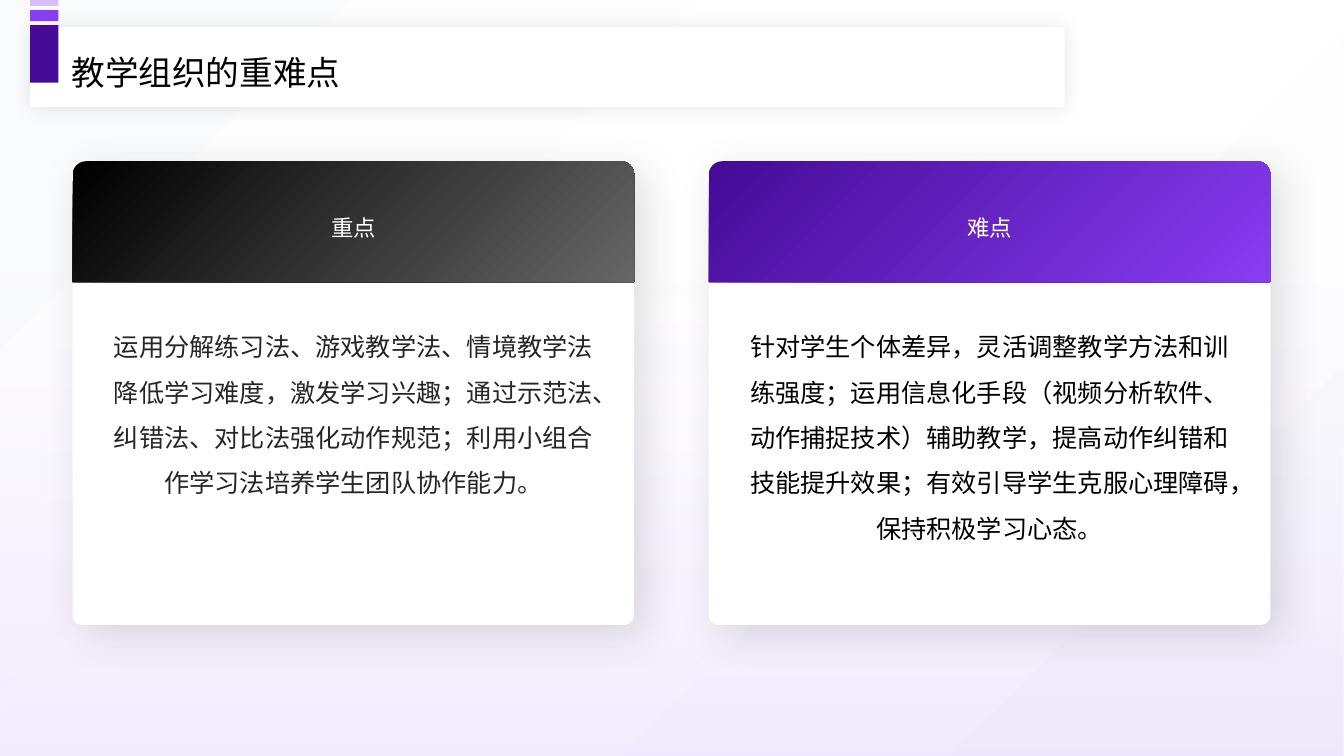
from dataclasses import dataclass

import lxml.etree
import pptx
import pptx.dml.color
import pptx.enum.shapes
import pptx.enum.text
import pptx.oxml.ns
import pptx.util

PX = 9144  # EMU per px, 100 px to the inch
SHAPES = pptx.enum.shapes.MSO_SHAPE
ALIGN = pptx.enum.text.PP_ALIGN
ANCHOR = pptx.enum.text.MSO_ANCHOR


@dataclass(frozen=True)
class Theme:
    font: str = "Noto Sans CJK SC"
    title_size: int = 24
    body_size: int = 18
    heading_size: int = 16
    white: str = "FFFFFF"
    black: str = "000000"
    charcoal: str = "262626"
    grey: str = "666666"
    mist: str = "FAFBFC"
    deep_purple: str = "450B98"
    purple: str = "873DF1"
    soft_purple: str = "AF7EF6"
    pale_purple: str = "D7BEFA"


THEME = Theme()

CARDS = [
    ("重点",
     "运用分解练习法、游戏教学法、情境教学法降低学习难度，激发学习兴趣；通过示范法、纠错法、"
     "对比法强化动作规范；利用小组合作学习法培养学生团队协作能力。",
     (THEME.black, THEME.grey), THEME.charcoal),
    ("难点",
     "针对学生个体差异，灵活调整教学方法和训练强度；运用信息化手段（视频分析软件、动作捕捉技术）"
     "辅助教学，提高动作纠错和技能提升效果；有效引导学生克服心理障碍，保持积极学习心态。",
     (THEME.deep_purple, THEME.purple), THEME.black),
]


def add_child(parent, tag, **attributes):
    child = lxml.etree.SubElement(parent, pptx.oxml.ns.qn(tag))
    for name, value in attributes.items():
        child.set(name, str(value))
    return child


def add_color(parent, color, opacity):
    """Append a colour with its opacity in percent."""
    node = add_child(parent, "a:srgbClr", val=color)
    if opacity < 100:
        add_child(node, "a:alpha", val=opacity * 1000)


def paint_gradient(owner, fill, stops, angle):
    """Fill with (percent, colour, opacity) stops at a clockwise angle."""
    fill.gradient()
    fill.gradient_angle = 360 - angle
    stop_list = owner.element.find(".//" + pptx.oxml.ns.qn("a:gsLst"))
    for stop in list(stop_list):
        stop_list.remove(stop)
    for position, color, opacity in stops:
        add_color(add_child(stop_list, "a:gs", pos=position * 1000), color, opacity)


def add_block(slide, kind, box, color=None):
    shape = slide.shapes.add_shape(kind, *(value * PX for value in box))
    shape.shadow.inherit = False
    shape.line.fill.background()
    if color:
        shape.fill.solid()
        shape.fill.fore_color.rgb = pptx.dml.color.RGBColor.from_string(color)
    return shape


def add_shadow(shape, color, opacity, blur, distance, angle):
    effects = shape.element.spPr.find(pptx.oxml.ns.qn("a:effectLst"))
    shadow = add_child(effects, "a:outerShdw", blurRad=pptx.util.Pt(blur),
                       dist=pptx.util.Pt(distance), dir=angle * 60000,
                       algn="ctr", rotWithShape=0)
    add_color(shadow, color, opacity)


def fill_placeholder(slide, index, box, text, size, color, line_spacing,
                     align=ALIGN.CENTER, anchor=ANCHOR.TOP, insets=(10, 5)):
    """Place and format a template placeholder, in front of earlier shapes."""
    shape = slide.placeholders[index]
    slide.shapes.element.append(shape.element)
    shape.left, shape.top, shape.width, shape.height = (value * PX for value in box)
    frame = shape.text_frame
    frame.text = text
    frame.word_wrap = True
    frame.auto_size = pptx.enum.text.MSO_AUTO_SIZE.NONE
    frame.vertical_anchor = anchor
    frame.margin_left = frame.margin_right = insets[0] * PX
    frame.margin_top = frame.margin_bottom = insets[1] * PX

    paragraph = frame.paragraphs[0]
    paragraph.alignment = align
    paragraph.line_spacing = line_spacing
    paragraph.space_before = pptx.util.Pt(0)
    properties = paragraph._p.get_or_add_pPr()
    properties.set("marL", "0")
    properties.set("indent", "0")
    add_child(properties, "a:buNone")
    font = paragraph.font
    font.size = pptx.util.Pt(size)
    font.bold = False
    font.name = THEME.font
    font.color.rgb = pptx.dml.color.RGBColor.from_string(color)
    add_child(properties.find(pptx.oxml.ns.qn("a:defRPr")), "a:ea", typeface=THEME.font)


def add_backdrop(slide):
    paint_gradient(slide, slide.background.fill,
                   [(0, THEME.mist, 100), (50, THEME.white, 100), (97, THEME.mist, 100)], 45)
    wash = add_block(slide, SHAPES.RECTANGLE, (0, 0, 1333, 750))
    paint_gradient(wash, wash.fill,
                   [(35, THEME.pale_purple, 0), (100, THEME.soft_purple, 15)], 90)


def add_card(slide, number, heading, body, gradient, body_color):
    left = 72 + number * 631
    panel = add_block(slide, SHAPES.ROUNDED_RECTANGLE, (left, 161, 557, 459), THEME.white)
    panel.adjustments[0] = 0.02
    add_shadow(panel, THEME.charcoal, 15, 30, 10, 45)

    header = add_block(slide, SHAPES.ROUND_2_SAME_RECTANGLE, (left, 160, 557, 120))
    header.adjustments[0] = 0.11
    start, end = gradient
    paint_gradient(header, header.fill, [(1, start, 100), (100, end, 100)], 45)

    heading_index = 1 + 2 * number
    fill_placeholder(slide, heading_index, (left + 40, 166, 477, 112), heading,
                     THEME.heading_size, THEME.white, 1.3,
                     anchor=ANCHOR.MIDDLE, insets=(7, 4))
    fill_placeholder(slide, heading_index + 1, (left + 40, 314, 477, 269), body,
                     THEME.body_size, body_color, 1.5, insets=(0, 0))


def add_title(slide, text):
    bar = add_block(slide, SHAPES.RECTANGLE, (30, 27, 1026, 79), THEME.white)
    add_shadow(bar, THEME.black, 10, 13, 0, 0)
    fill_placeholder(slide, 0, (61, 42, 882, 50), text, THEME.title_size,
                     THEME.black, 1.1, align=ALIGN.LEFT)
    for top, height, color in [(25, 57, THEME.deep_purple), (10, 11, THEME.purple),
                               (0, 6, THEME.pale_purple)]:
        add_block(slide, SHAPES.RECTANGLE, (30, top, 28, height), color)


def main():
    presentation = pptx.Presentation()
    presentation.slide_width = 1333 * PX
    presentation.slide_height = 750 * PX
    comparison_layout = presentation.slide_layouts[4]
    slide = presentation.slides.add_slide(comparison_layout)
    add_backdrop(slide)
    for number, card in enumerate(CARDS):
        add_card(slide, number, *card)
    add_title(slide, "教学组织的重难点")
    presentation.save("out.pptx")


if __name__ == "__main__":
    main()
